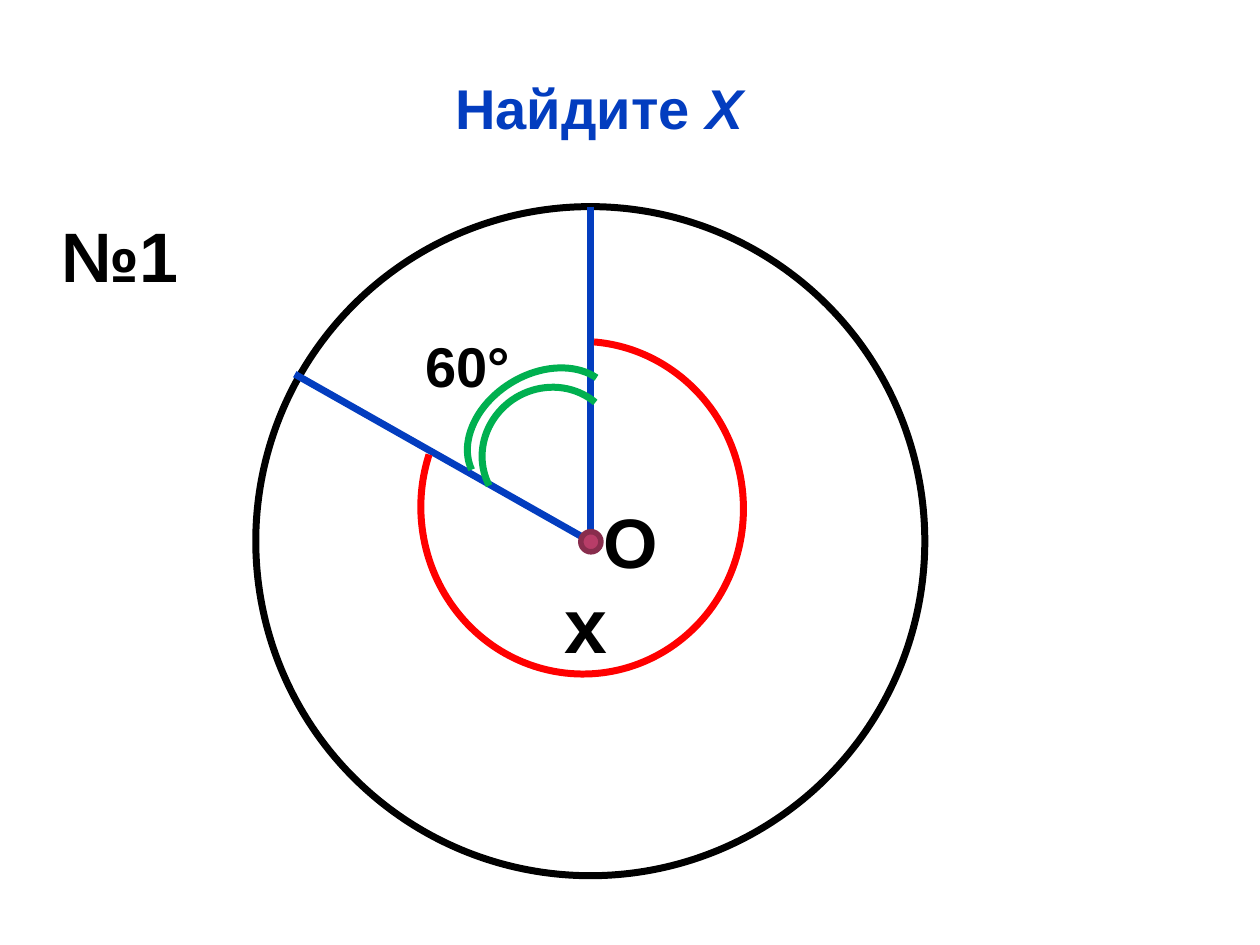
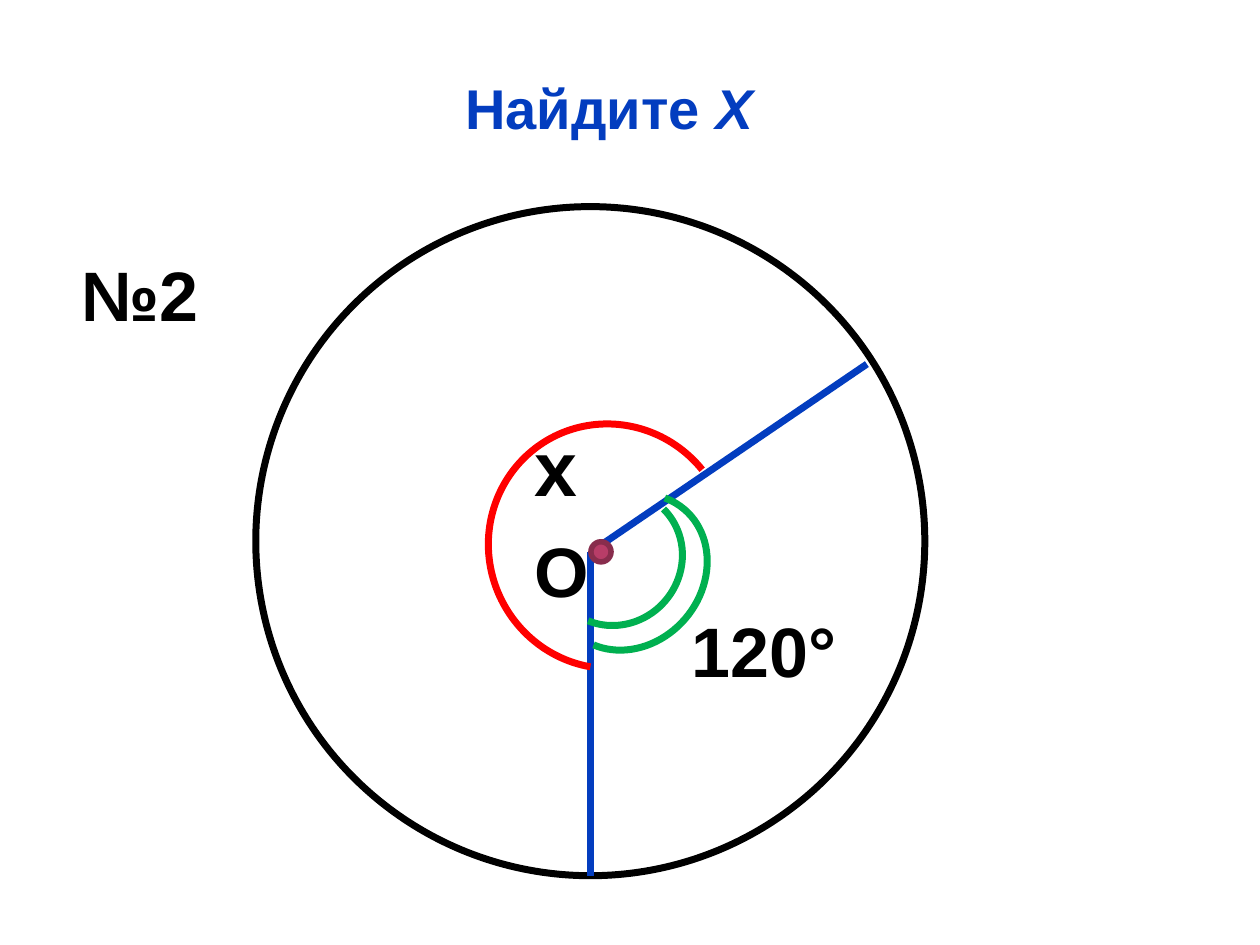
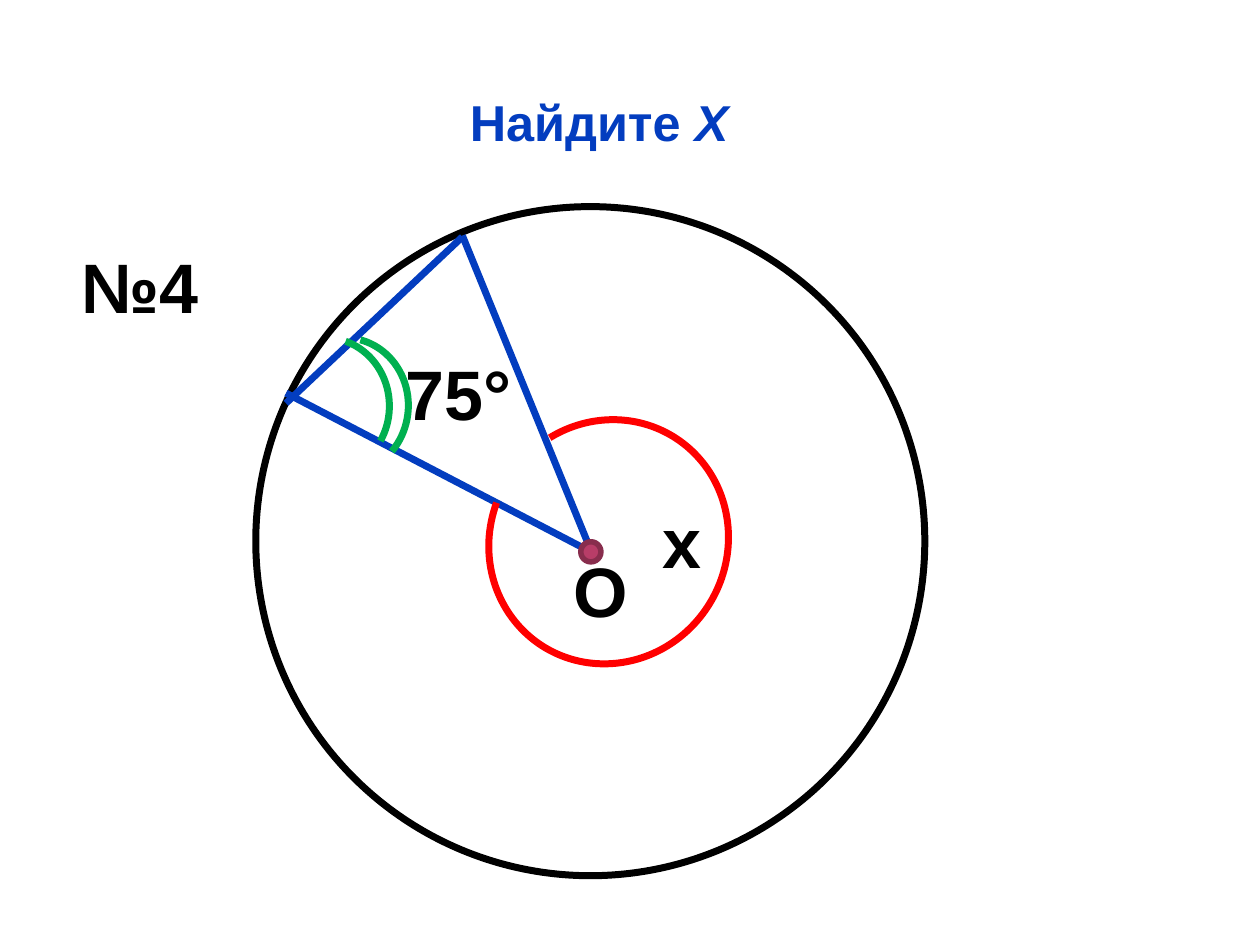
from dataclasses import dataclass

from lxml import etree
from pptx import Presentation
from pptx import util as u
from pptx.dml.color import RGBColor
from pptx.enum import shapes, text
from pptx.oxml import ns

WHITE = RGBColor(0xFF, 0xFF, 0xFF)
BLACK = RGBColor(0x00, 0x00, 0x00)
BLUE = RGBColor(0x03, 0x3D, 0xBF)
RED = RGBColor(0xFF, 0x00, 0x00)
GREEN = RGBColor(0x00, 0xB0, 0x50)
ROSE = RGBColor(0xB8, 0x3D, 0x68)
PLUM = RGBColor(0x88, 0x2D, 0x4D)

FONT = "Arial"
SLIDE_WIDTH, SLIDE_HEIGHT = u.Inches(10), u.Inches(7.5)
COLUMNS = 100
CELL = SLIDE_WIDTH // COLUMNS
STROKE = 4
DISC_SIZE = 53.1
DOT_SIZE = 1.6
ARC_UNITS_PER_DEGREE = 0.6


@dataclass
class Box:
    left: float
    top: float
    width: float
    height: float

    def inside(self, left, top, width=0, height=0):
        return Box(self.left + left, self.top + top, width, height)

    def lengths(self):
        return [round(value * CELL) for value in (self.left, self.top, self.width, self.height)]


DISC = Box(20.3, 16.4, DISC_SIZE, DISC_SIZE)


@dataclass
class Problem:
    title_box: Box
    title_size: float
    rays: list
    arcs: list
    labels: list
    dot: tuple


PROBLEMS = [
    Problem(
        title_box=Box(6.7, 3.6, 81.7, 8.1),
        title_size=32,
        rays=[((26.6, 0), (26.6, 26.6)), ((26.6, 26.6), (3.1, 13.3))],
        arcs=[
            (RED, (12.7, 11.1, 26.4, 25.6), 84.9, 189.2, 114.26),
            (GREEN, (16.4, 13.3, 12.6, 9.3), 328.6, 183.59, 346.3),
            (GREEN, (17.9, 14.4, 10.9, 10.4), 328.6, 183.59, 342.99),
        ],
        labels=[
            ("№1", (-16.4, 0), 11.7, 40),
            ("60°", (12.5, 9.4), 9.4, 32),
            ("x", (23.5, 28.9), 4.7, 44),
            ("О", (26.6, 22.7), 6.4, 40),
        ],
        dot=(25.8, 25.8),
    ),
    Problem(
        title_box=Box(7.5, 5.2, 81.7, 6.5),
        title_size=32,
        rays=[((48.5, 12.5), (26.6, 27.4)), ((26.6, 53.1), (26.6, 27.4))],
        arcs=[
            (GREEN, (23.2, 23.3, 13.1, 11.4), 130.7, 164.07, 346.3),
            (GREEN, (23.1, 22.7, 10.9, 10.4), 130.7, 183.59, 342.99),
            (RED, (18.3, 17.4, 19.5, 19.1), 243.6, 215.24, 76.94),
        ],
        labels=[
            ("x", (21.1, 16.4), 6.2, 44),
            ("120°", (33.6, 31.3), 18, 40),
            ("№2", (-14.8, 3.1), 12.5, 40),
            ("О", (21.1, 25), 6.4, 40),
        ],
        dot=(26.6, 26.6),
    ),
    Problem(
        title_box=Box(6.7, 6.8, 81.7, 5.7),
        title_size=28.8,
        rays=[
            ((16.4, 2.3), (26.6, 27.3)),
            ((26.6, 27.4), (2.4, 14.8)),
            ((16.4, 2.4), (2.4, 15.6)),
        ],
        arcs=[
            (RED, (18.2, 17.2, 19.6, 18.8), 121.8, 118.65, 77.41),
            (GREEN, (0, 10.7, 10.9, 10.3), 92.5, 195.41, 299.31),
            (GREEN, (1.5, 10.7, 10.9, 10.3), 97, 187.36, 305.9),
        ],
        labels=[
            ("О", (24.2, 26.6), 6.4, 40),
            ("75°", (10.9, 10.9), 11.5, 40),
            ("x", (31.3, 22.7), 7, 40),
            ("№4", (-14.8, 2.4), 14.1, 40),
        ],
        dot=(25.8, 26.6),
    ),
]


def add_text(paragraph, content, size, color=BLACK, bold=True, italic=False):
    run = paragraph.add_run()
    run.text = content
    run.font.name = FONT
    run.font.size = u.Pt(size)
    run.font.bold = bold
    run.font.italic = italic
    run.font.color.rgb = color


def add_outline(slide, preset, box, line, fill=None, width=STROKE):
    shape = slide.shapes.add_shape(preset, *box.lengths())
    shape.shadow.inherit = False
    shape.line.color.rgb = line
    shape.line.width = u.Pt(width)
    if fill is None:
        shape.fill.background()
    else:
        shape.fill.solid()
        shape.fill.fore_color.rgb = fill
    return shape


def add_title(slide, box, size):
    title = slide.shapes.title
    title.left, title.top, title.width, title.height = box.lengths()
    frame = title.text_frame
    frame.auto_size = text.MSO_AUTO_SIZE.NONE
    frame.vertical_anchor = text.MSO_ANCHOR.BOTTOM
    paragraph = frame.paragraphs[0]
    paragraph.alignment = text.PP_ALIGN.CENTER
    add_text(paragraph, "Найдите ", size, color=BLUE)
    add_text(paragraph, "Х", size, color=BLUE, italic=True)


def add_ray(slide, disc, start, end):
    points = [disc.inside(*point).lengths()[:2] for point in (start, end)]
    ray = slide.shapes.add_connector(shapes.MSO_CONNECTOR.STRAIGHT, *points[0], *points[1])
    ray.line.color.rgb = BLUE
    ray.line.width = u.Pt(STROKE)
    etree.SubElement(ray._element.spPr, ns.qn("a:effectLst"))


def add_arc(slide, disc, color, place, rotation, start, end):
    arc = add_outline(slide, shapes.MSO_SHAPE.ARC, disc.inside(*place), color)
    arc.rotation = rotation
    for index, angle in enumerate((start, end)):
        arc.adjustments[index] = angle * ARC_UNITS_PER_DEGREE


def add_label(slide, disc, content, corner, width, size):
    height = size * 0.16 + 1.3
    label = slide.shapes.add_textbox(*disc.inside(*corner, width, height).lengths())
    label.text_frame.word_wrap = True
    add_text(label.text_frame.paragraphs[0], content, size)


def draw_circle_problem(slide, disc, problem):
    ellipse = shapes.MSO_SHAPE.OVAL
    add_outline(slide, ellipse, disc, BLACK, fill=WHITE)
    for ray in problem.rays:
        add_ray(slide, disc, *ray)
    for arc in problem.arcs:
        add_arc(slide, disc, *arc)
    for label in problem.labels:
        add_label(slide, disc, *label)
    dot_box = disc.inside(*problem.dot, DOT_SIZE, DOT_SIZE)
    add_outline(slide, ellipse, dot_box, PLUM, fill=ROSE, width=3.15)


def main():
    presentation = Presentation()
    presentation.slide_width, presentation.slide_height = SLIDE_WIDTH, SLIDE_HEIGHT
    title_only = presentation.slide_layouts.get_by_name("Title Only")
    for problem in PROBLEMS:
        slide = presentation.slides.add_slide(title_only)
        add_title(slide, problem.title_box, problem.title_size)
        draw_circle_problem(slide, DISC, problem)
    presentation.save("out.pptx")


if __name__ == "__main__":
    main()
